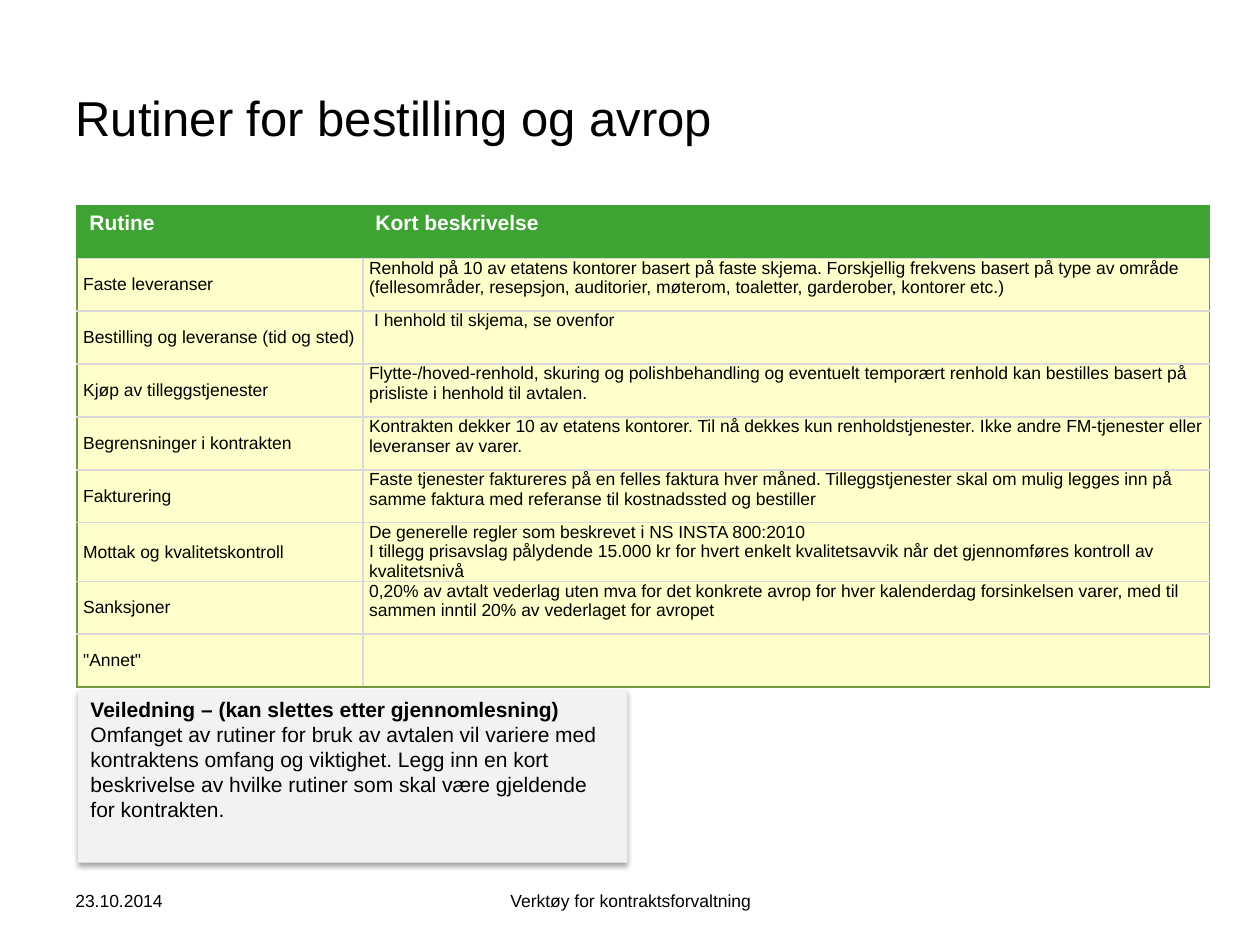
from dataclasses import dataclass

from lxml import etree
from pptx import Presentation, util as u
from pptx.dml.color import RGBColor
from pptx.enum import shapes, text
from pptx.oxml import ns

COLORS = {
    "ink": "000000",
    "header": "3EA333",
    "header_ink": "FFFFFF",
    "cell": "FFFFCC",
    "frame": "709A3C",
    "grid": "D9D9D9",
    "guide": "F2F2F2",
}
FONT = "Arial"
WIDTH, HEIGHT = u.Inches(10), u.Inches(7.5)
ROW_HEIGHT = u.Inches(0.42)
COLUMN_WIDTHS = (u.Inches(2.27), u.Inches(6.72))


@dataclass(frozen=True)
class Area:
    """A rectangle given as shares of the slide's width and height."""
    left: float
    top: float
    width: float
    height: float

    def box(self) -> tuple[int, ...]:
        return (int(self.left * WIDTH), int(self.top * HEIGHT),
                int(self.width * WIDTH), int(self.height * HEIGHT))


@dataclass(frozen=True)
class Routine:
    name: str
    description: str
    indent: float = 0.05


@dataclass(frozen=True)
class FooterField:
    area: Area
    content: str
    align: text.PP_ALIGN


ROUTINES = (
    Routine("Faste leveranser",
            "Renhold på 10 av etatens kontorer basert på faste skjema. Forskjellig frekvens basert på "
            "type av område (fellesområder, resepsjon, auditorier, møterom, toaletter, garderober, "
            "kontorer etc.)"),
    Routine("Bestilling og leveranse (tid og sted)",
            "I henhold til skjema, se ovenfor", indent=0.09),
    Routine("Kjøp av tilleggstjenester",
            "Flytte-/hoved-renhold, skuring og polishbehandling og eventuelt temporært renhold kan "
            "bestilles basert på prisliste i henhold til avtalen."),
    Routine("Begrensninger i kontrakten",
            "Kontrakten dekker 10 av etatens kontorer. Til nå dekkes kun renholdstjenester. Ikke andre "
            "FM-tjenester eller leveranser av varer."),
    Routine("Fakturering",
            "Faste tjenester faktureres på en felles faktura hver måned. Tilleggstjenester skal om mulig "
            "legges inn på samme faktura med referanse til kostnadssted og bestiller"),
    Routine("Mottak og kvalitetskontroll",
            "De generelle regler som beskrevet i NS INSTA 800:2010\n"
            "I tillegg prisavslag pålydende 15.000 kr for hvert enkelt kvalitetsavvik når det "
            "gjennomføres kontroll av kvalitetsnivå"),
    Routine("Sanksjoner",
            "0,20% av avtalt vederlag uten mva for det konkrete avrop for hver kalenderdag forsinkelsen "
            "varer, med til sammen inntil 20% av vederlaget for avropet"),
    Routine('"Annet"', ""),
)
GUIDE = (
    "Veiledning – (kan slettes etter gjennomlesning)\n"
    "Omfanget av rutiner for bruk av avtalen vil variere med kontraktens omfang og viktighet. "
    "Legg inn en kort beskrivelse av hvilke rutiner som skal være gjeldende for kontrakten."
)
FOOTER = (
    FooterField(Area(0.05, 0.927, 0.233, 0.053), "23.10.2014", text.PP_ALIGN.LEFT),
    FooterField(Area(0.342, 0.927, 0.317, 0.053), "Verktøy for kontraktsforvaltning",
                text.PP_ALIGN.CENTER),
)


def color(name: str) -> RGBColor:
    return RGBColor.from_string(COLORS[name])


def write(frame, content: str, size: float, ink: str = "ink", bold: bool = False,
          align=text.PP_ALIGN.LEFT) -> None:
    frame.text = content
    frame.word_wrap = True
    for paragraph in frame.paragraphs:
        paragraph.alignment = align
        for run in paragraph.runs:
            run.font.name, run.font.size, run.font.bold = FONT, u.Pt(size), bold
            run.font.color.rgb = color(ink)


def set_borders(cell, left: str, right: str, top: str, bottom: str, width: float) -> None:
    properties = cell._tc.get_or_add_tcPr()
    sides = {"lnL": left, "lnR": right, "lnT": top, "lnB": bottom}
    for position, (tag, name) in enumerate(sides.items()):
        line = etree.Element(ns.qn(f"a:{tag}"), w=str(u.Pt(width)))
        fill = etree.SubElement(line, ns.qn("a:solidFill"))
        etree.SubElement(fill, ns.qn("a:srgbClr"), val=COLORS[name])
        properties.insert(position, line)


def draw_cell(cell, content: str, column: int, indent: float, last: bool) -> None:
    cell.fill.solid()
    cell.fill.fore_color.rgb = color("cell")
    cell.margin_left, cell.margin_right = u.Inches(indent), u.Inches(0.05)
    cell.margin_top = cell.margin_bottom = 0
    cell.vertical_anchor = text.MSO_ANCHOR.TOP if column else text.MSO_ANCHOR.MIDDLE
    write(cell.text_frame, content, 10)
    set_borders(cell, left="grid" if column else "frame", right="frame" if column else "grid",
                top="grid", bottom="frame" if last else "grid", width=1)


def draw_routines(slide) -> None:
    table = slide.shapes.add_table(
        len(ROUTINES) + 1, len(COLUMN_WIDTHS), int(0.061 * WIDTH), u.Inches(1.63),
        sum(COLUMN_WIDTHS), ROW_HEIGHT * (len(ROUTINES) + 1)).table
    for column, width in zip(table.columns, COLUMN_WIDTHS):
        column.width = width
    for row in table.rows:
        row.height = ROW_HEIGHT
    for column, heading in enumerate(("Rutine", "Kort beskrivelse")):
        cell = table.cell(0, column)
        cell.fill.solid()
        cell.fill.fore_color.rgb = color("header")
        write(cell.text_frame, heading, 12, "header_ink", bold=True)
        set_borders(cell, "header", "header", "header", "header", 0.75)
    for row, routine in enumerate(ROUTINES, start=1):
        last = row == len(ROUTINES)
        draw_cell(table.cell(row, 0), routine.name, 0, 0.05, last)
        draw_cell(table.cell(row, 1), routine.description, 1, routine.indent, last)


def draw_guide(slide, area: Area) -> None:
    guide = slide.shapes.add_shape(shapes.MSO_SHAPE.RECTANGLE, *area.box())
    guide.fill.solid()
    guide.fill.fore_color.rgb = color("guide")
    guide.line.fill.background()
    guide.shadow.inherit = False
    effects = guide._element.spPr.find(ns.qn("a:effectLst"))
    shadow = etree.SubElement(effects, ns.qn("a:outerShdw"), blurRad=str(u.Pt(3.1)),
                              dist=str(u.Pt(1.8)), dir="5400000", rotWithShape="0")
    tint = etree.SubElement(shadow, ns.qn("a:srgbClr"), val=COLORS["ink"])
    etree.SubElement(tint, ns.qn("a:alpha"), val="35000")
    guide.text_frame.vertical_anchor = text.MSO_ANCHOR.TOP
    write(guide.text_frame, GUIDE, 12)
    guide.text_frame.paragraphs[0].runs[0].font.bold = True


def draw_footer_field(slide, field: FooterField) -> None:
    frame = slide.shapes.add_textbox(*field.area.box()).text_frame
    frame.vertical_anchor = text.MSO_ANCHOR.MIDDLE
    write(frame, field.content, 10, align=field.align)


def main() -> None:
    deck = Presentation()
    deck.slide_width, deck.slide_height = WIDTH, HEIGHT
    slide = deck.slides.add_slide(deck.slide_layouts[5])

    # Title
    title = slide.shapes.title
    title.left, title.top, title.width, title.height = Area(0.05, 0.04, 0.9, 0.167).box()
    title.text_frame.vertical_anchor = text.MSO_ANCHOR.MIDDLE
    write(title.text_frame, "Rutiner for bestilling og avrop", 28)

    # Routines, footer and guidance note
    draw_routines(slide)
    for field in FOOTER:
        draw_footer_field(slide, field)
    draw_guide(slide, Area(0.062, 0.73, 0.436, 0.183))

    deck.save("out.pptx")


if __name__ == "__main__":
    main()
